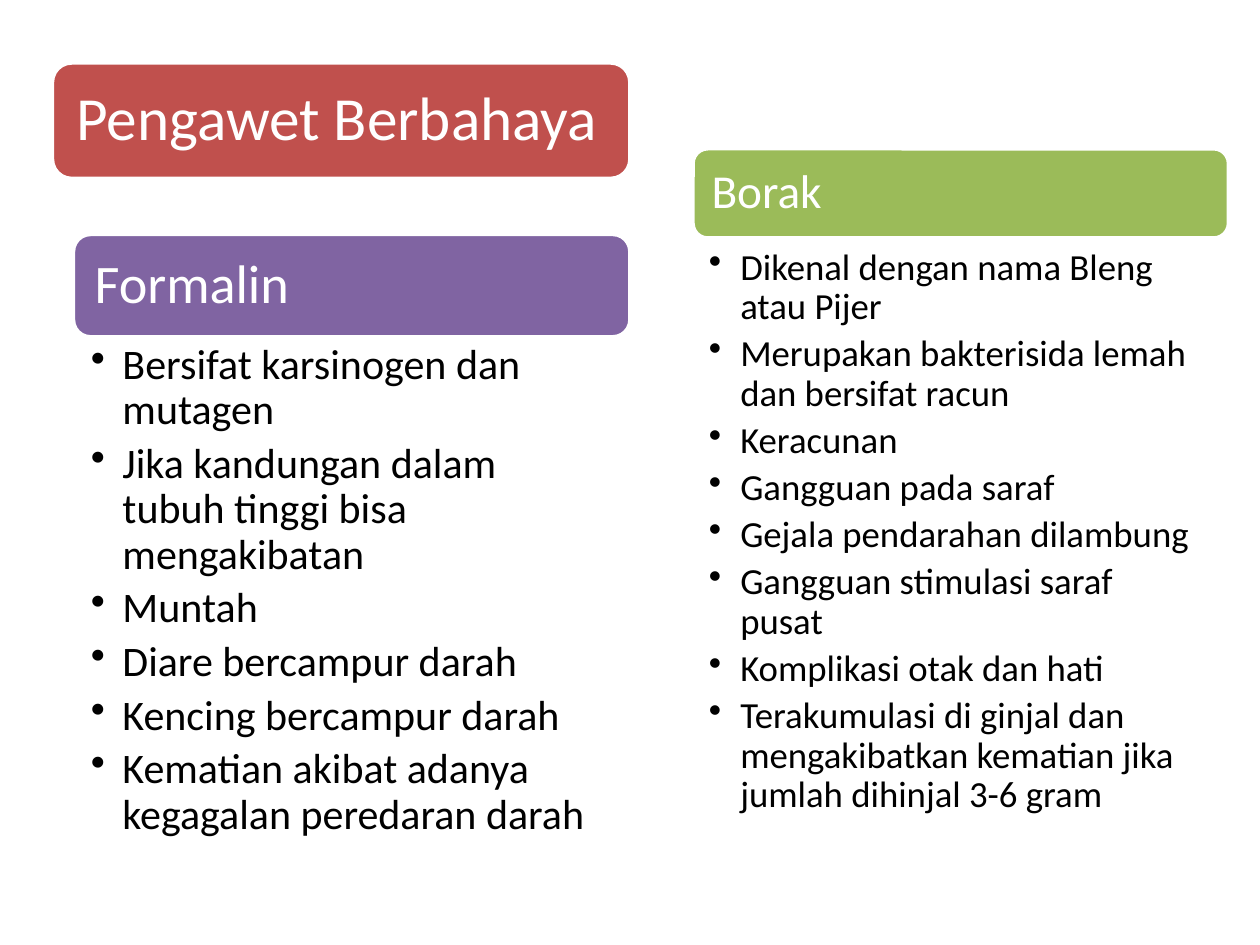
from lxml.etree import SubElement
from pptx import Presentation
from pptx.dml.color import RGBColor
from pptx.enum.shapes import MSO_SHAPE
from pptx.enum.text import MSO_ANCHOR, PP_ALIGN
from pptx.oxml.ns import qn
from pptx.util import Pt

WHITE = RGBColor(0xFF, 0xFF, 0xFF)
BLACK = RGBColor(0x00, 0x00, 0x00)
RED = RGBColor(0xC0, 0x50, 0x4D)
PURPLE = RGBColor(0x80, 0x64, 0xA2)
GREEN = RGBColor(0x9B, 0xBB, 0x59)

FONT = "Calibri"
BULLET_INDENT = 18

FORMALIN_EFFECTS = [
    "Bersifat karsinogen dan mutagen",
    "Jika kandungan dalam tubuh tinggi bisa mengakibatan",
    "Muntah",
    "Diare bercampur darah",
    "Kencing bercampur darah",
    "Kematian akibat adanya kegagalan peredaran darah",
]
BORAK_EFFECTS = [
    "Dikenal dengan nama Bleng atau Pijer",
    "Merupakan bakterisida lemah dan bersifat racun",
    "Keracunan",
    "Gangguan pada saraf",
    "Gejala pendarahan dilambung",
    "Gangguan stimulasi saraf pusat",
    "Komplikasi otak dan hati",
    "Terakumulasi di ginjal dan mengakibatkan kematian jika jumlah dihinjal 3-6 gram",
]


def set_margins(frame, left, top, right, bottom):
    frame.word_wrap = True
    frame.margin_left, frame.margin_top = Pt(left), Pt(top)
    frame.margin_right, frame.margin_bottom = Pt(right), Pt(bottom)


def format_paragraph(paragraph, text, size, color):
    paragraph.text = text
    paragraph.alignment = PP_ALIGN.LEFT
    paragraph.line_spacing = 0.9
    paragraph.font.name = FONT
    paragraph.font.size = Pt(size)
    paragraph.font.color.rgb = color


def add_bullet(paragraph):
    properties = paragraph._p.get_or_add_pPr()
    properties.set("marL", str(Pt(BULLET_INDENT)))
    properties.set("indent", str(-Pt(BULLET_INDENT)))
    SubElement(properties, qn("a:buChar")).set("char", "•")


def add_banner(slide, box, text, size, color):
    """Rounded heading whose padding follows the text size."""
    banner = slide.shapes.add_shape(MSO_SHAPE.ROUNDED_RECTANGLE, *map(Pt, box))
    banner.shadow.inherit = False
    banner.fill.solid()
    banner.fill.fore_color.rgb = color
    banner.line.color.rgb = WHITE
    banner.line.width = Pt(2)
    frame = banner.text_frame
    frame.vertical_anchor = MSO_ANCHOR.MIDDLE
    set_margins(frame, *[0.3 * size] * 4)
    format_paragraph(frame.paragraphs[0], text, size, WHITE)


def add_bullet_list(slide, box, items, size, left_margin, right_margin):
    frame = slide.shapes.add_textbox(*map(Pt, box)).text_frame
    set_margins(frame, left_margin, 3, right_margin, 3)
    for index, item in enumerate(items):
        paragraph = frame.add_paragraph() if index else frame.paragraphs[0]
        format_paragraph(paragraph, item, size, BLACK)
        paragraph.space_after = Pt(0.2 * size)
        add_bullet(paragraph)


def main():
    presentation = Presentation()
    presentation.slide_width, presentation.slide_height = Pt(720), Pt(540)
    slide = presentation.slides.add_slide(presentation.slide_layouts[6])

    # Left column: formalin
    add_banner(slide, (42, 134, 318, 58.5), "Formalin", 31, PURPLE)
    add_bullet_list(slide, (42, 193, 318, 303), FORMALIN_EFFECTS, 24, 10, 17)

    # Slide title
    add_banner(slide, (30, 36, 330, 66), "Pengawet Berbahaya", 35, RED)

    # Right column: borax
    add_banner(slide, (396, 85, 306, 51), "Borak", 27, GREEN)
    add_bullet_list(slide, (396, 139, 306, 343), BORAK_EFFECTS, 21, 9, 15)

    presentation.save("out.pptx")


if __name__ == "__main__":
    main()
